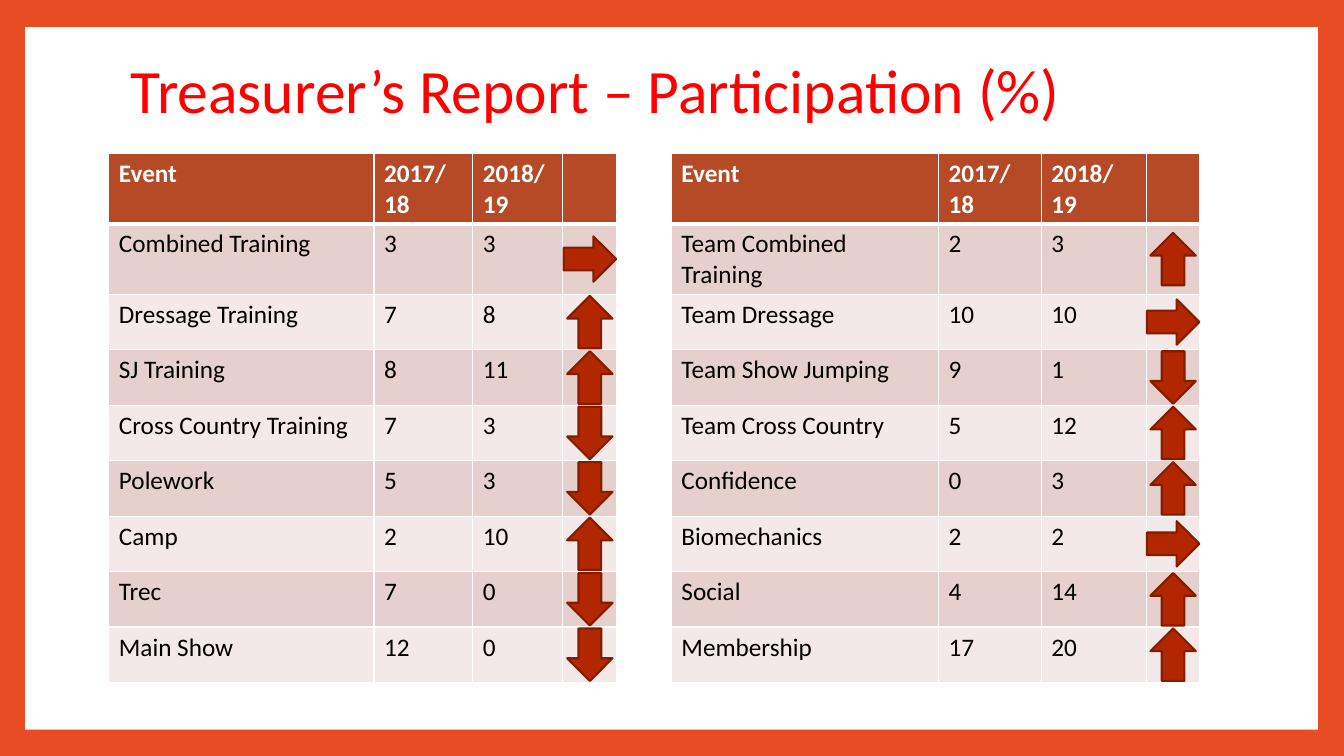
from lxml import etree
from pptx import Presentation
from pptx.dml.color import RGBColor
from pptx.enum.shapes import MSO_SHAPE
from pptx.enum.text import MSO_ANCHOR
from pptx.oxml.ns import qn
from pptx.util import Inches, Pt

RECTANGLE = MSO_SHAPE.RECTANGLE
RIGHT_ARROW = MSO_SHAPE.RIGHT_ARROW
MIDDLE = MSO_ANCHOR.MIDDLE

ORANGE = RGBColor(0xE8, 0x4C, 0x22)
WHITE = RGBColor(0xFF, 0xFF, 0xFF)
BLACK = RGBColor(0, 0, 0)
RED = RGBColor(0xFF, 0, 0)
HEADER_FILL = RGBColor(0xB6, 0x49, 0x26)
BAND_FILLS = (RGBColor(0xE5, 0xD0, 0xCD), RGBColor(0xF3, 0xE9, 0xE8))
ARROW_FILL = RGBColor(0xB2, 0x26, 0x00)
ARROW_LINE = RGBColor(0x84, 0x1C, 0x00)
FONT = "Calibri"

TITLE = "Treasurer’s Report – Participation (%)"
HEADER = ("Event", "2017/\n18", "2018/19", "", None, "Event", "2017/\n18", "2018/\n19", "")
TRAINING = [
    ("Combined Training", 3, 3),
    ("Dressage Training", 7, 8),
    ("SJ Training", 8, 11),
    ("Cross Country Training", 7, 3),
    ("Polework", 5, 3),
    ("Camp", 2, 10),
    ("Trec", 7, 0),
    ("Main Show", 12, 0),
]
TEAMS = [
    ("Team Combined Training", 2, 3),
    ("Team Dressage", 10, 10),
    ("Team Show Jumping", 9, 1),
    ("Team Cross Country", 5, 12),
    ("Confidence", 0, 3),
    ("Biomechanics", 2, 2),
    ("Social", 4, 14),
    ("Membership", 17, 20),
]

TABLE_LEFT, TABLE_TOP = 1.08, 1.52
COLUMN_WIDTHS = (2.63, 0.98, 0.89, 0.54, 0.54, 2.65, 1.02, 1.04, 0.53)
ROW_HEIGHTS = (0.7, 0.7) + (0.55,) * 7
ARROW_WIDTH, ARROW_HEIGHT = 0.52, 0.45
TREND_COLUMNS = (3, 8)


def set_borders(cell, top, bottom):
    properties = cell._tc.get_or_add_tcPr()
    for tag, width in (("a:lnL", 1), ("a:lnR", 1), ("a:lnT", top), ("a:lnB", bottom)):
        line = etree.SubElement(properties, qn(tag), w=str(Pt(width)))
        fill = etree.SubElement(line, qn("a:solidFill"))
        etree.SubElement(fill, qn("a:srgbClr"), val=str(WHITE))


def style_text(text_frame, size, color, bold=False):
    for paragraph in text_frame.paragraphs:
        paragraph.font.name = FONT
        paragraph.font.size = Pt(size)
        paragraph.font.bold = bold
        paragraph.font.color.rgb = color


def add_block(slide, shape_type, left, top, width, height, color):
    shape = slide.shapes.add_shape(
        shape_type, Inches(left), Inches(top), Inches(width), Inches(height))
    shape.shadow.inherit = False
    shape.fill.solid()
    shape.fill.fore_color.rgb = color
    return shape


def add_title(slide):
    title = slide.shapes.add_textbox(Inches(1.2), Inches(0.5), Inches(10.8), Inches(0.86))
    frame = title.text_frame
    frame.word_wrap = True
    frame.vertical_anchor = MIDDLE
    frame.text = TITLE
    frame.paragraphs[0].line_spacing = 0.9
    style_text(frame, 44, RED)


def add_participation_table(slide):
    rows = [HEADER] + [(*left, "", None, *right, "") for left, right in zip(TRAINING, TEAMS)]
    table = slide.shapes.add_table(
        len(rows), len(COLUMN_WIDTHS), Inches(TABLE_LEFT), Inches(TABLE_TOP),
        Inches(sum(COLUMN_WIDTHS)), Inches(sum(ROW_HEIGHTS))).table
    for column, width in zip(table.columns, COLUMN_WIDTHS):
        column.width = Inches(width)
    for index, values in enumerate(rows):
        table.rows[index].height = Inches(ROW_HEIGHTS[index])
        is_header = index == 0
        row_fill = HEADER_FILL if is_header else BAND_FILLS[(index - 1) % 2]
        for column, value in enumerate(values):
            cell = table.cell(index, column)
            set_borders(cell, 3 if index == 1 else 1, 3 if is_header else 1)
            if value is None:
                cell.fill.background()
            else:
                cell.fill.solid()
                cell.fill.fore_color.rgb = row_fill
                cell.text = str(value)
            style_text(cell.text_frame, 18, WHITE if is_header else BLACK, is_header)


def add_trend_arrows(slide):
    for events, column in zip((TRAINING, TEAMS), TREND_COLUMNS):
        center_x = TABLE_LEFT + sum(COLUMN_WIDTHS[:column]) + COLUMN_WIDTHS[column] / 2
        for row, (_, before, after) in enumerate(events, start=1):
            center_y = TABLE_TOP + sum(ROW_HEIGHTS[:row]) + ROW_HEIGHTS[row] / 2
            arrow = add_block(
                slide, RIGHT_ARROW, center_x - ARROW_WIDTH / 2, center_y - ARROW_HEIGHT / 2,
                ARROW_WIDTH, ARROW_HEIGHT, ARROW_FILL)
            arrow.line.color.rgb = ARROW_LINE
            arrow.line.width = Pt(1.5)
            if after != before:
                arrow.rotation = 270 if after > before else 90


def main():
    presentation = Presentation()
    presentation.slide_width = Inches(13.33)
    presentation.slide_height = Inches(7.5)
    slide = presentation.slides.add_slide(presentation.slide_layouts[6])
    slide.background.fill.solid()
    slide.background.fill.fore_color.rgb = ORANGE
    panel = add_block(slide, RECTANGLE, 0.25, 0.27, 12.82, 6.97, WHITE)
    panel.line.fill.background()
    add_title(slide)
    add_participation_table(slide)
    add_trend_arrows(slide)
    presentation.save("out.pptx")


if __name__ == "__main__":
    main()
